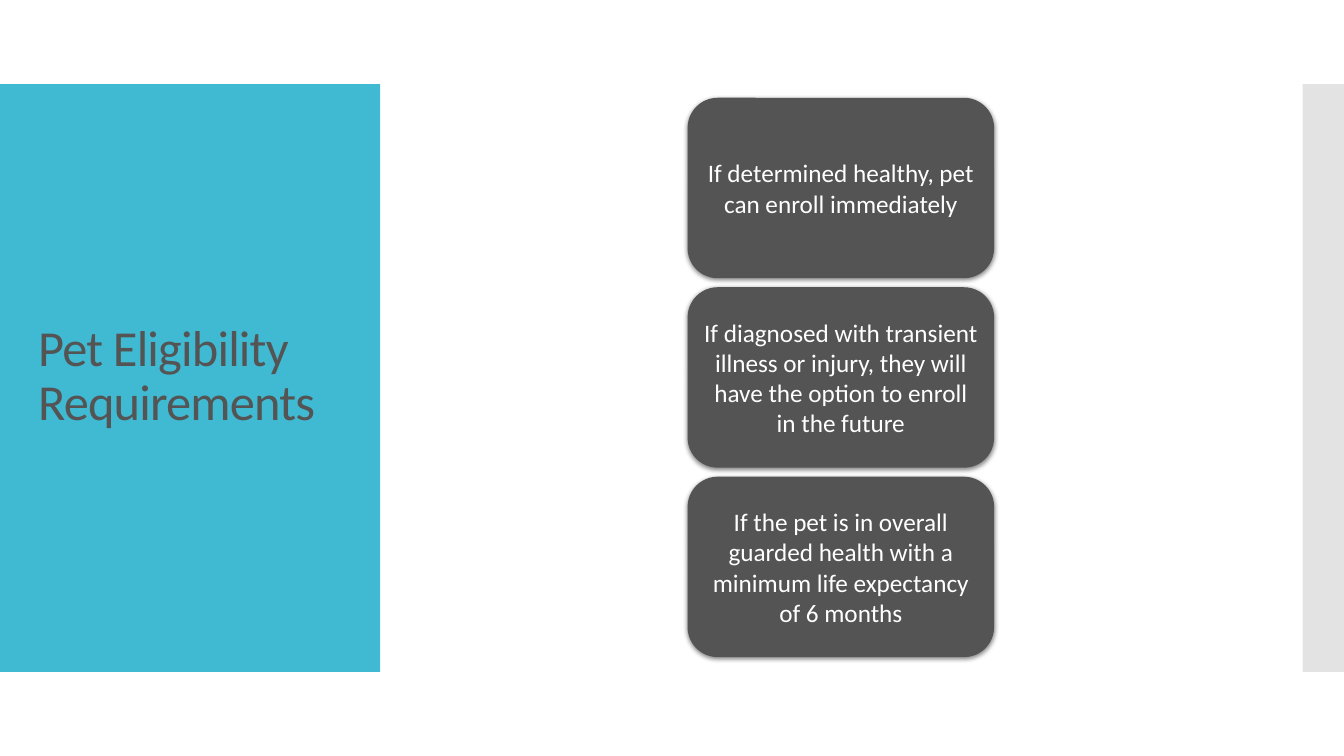
from dataclasses import dataclass

from lxml import etree
from pptx import Presentation
from pptx import util as u
from pptx.dml.color import RGBColor
from pptx.enum import shapes, text
from pptx.oxml import ns

SLIDE_W, SLIDE_H = 13.33, 7.5
BAND_TOP, BAND_H = SLIDE_H / 9, SLIDE_H * 7 / 9
CARD_LEFT, CARD_TOP, CARD_W, CARD_H = 6.82, 0.97, 3.04, 1.79
CARD_PITCH = CARD_H * 1.05

REQUIREMENTS = (
    "If determined healthy, pet can enroll immediately",
    "If diagnosed with transient illness or injury, they will have the option "
    "to enroll in the future",
    "If the pet is in overall guarded health with a minimum life expectancy "
    "of 6 months",
)


@dataclass(frozen=True)
class Theme:
    font: str = "Calibri"
    title_size: int = 36
    card_size: int = 18
    panel: str = "40BAD2"
    edge: str = "C8C8C8"
    dark: str = "545454"
    light: str = "FFFFFF"
    shadow: str = "000000"


THEME = Theme()


def add_color(parent, color, alpha):
    """Append a colour with an opacity in percent."""
    srgb = etree.SubElement(parent, ns.qn("a:srgbClr"), val=color)
    etree.SubElement(srgb, ns.qn("a:alpha"), val=str(alpha * 1000))


def add_block(slide, preset, left, top, width, height, color):
    block = slide.shapes.add_shape(
        preset, u.Inches(left), u.Inches(top), u.Inches(width), u.Inches(height))
    block.shadow.inherit = False
    block.fill.solid()
    block.fill.fore_color.rgb = RGBColor.from_string(color)
    block.line.fill.background()
    return block


def add_band(slide, left, width, color):
    return add_block(slide, shapes.MSO_SHAPE.RECTANGLE,
                     left, BAND_TOP, width, BAND_H, color)


def fade(block, color, alpha):
    fill = block.fill._xPr.find(ns.qn("a:solidFill"))
    fill.clear()
    add_color(fill, color, alpha)


def cast_shadow(block):
    """Give a block a soft shadow straight below it."""
    effects = block._element.spPr.find(ns.qn("a:effectLst"))
    shadow = etree.SubElement(
        effects, ns.qn("a:outerShdw"), blurRad=str(u.Pt(3.5)),
        dist=str(u.Pt(1.1)), dir=str(90 * 60000), algn="ctr", rotWithShape="0")
    add_color(shadow, THEME.shadow, 45)


def write(shape, wording, size, color, align):
    frame = shape.text_frame
    frame.text = wording
    frame.word_wrap = True
    frame.vertical_anchor = text.MSO_ANCHOR.MIDDLE
    paragraph = frame.paragraphs[0]
    paragraph.alignment = align
    font = paragraph.runs[0].font
    font.name, font.size = THEME.font, u.Pt(size)
    font.color.rgb = RGBColor.from_string(color)
    return paragraph


def add_title(slide, wording):
    title = slide.shapes.add_textbox(
        u.Inches(0.28), u.Inches(1.23), u.Inches(3.22), u.Inches(5.03))
    paragraph = write(title, wording, THEME.title_size, THEME.dark,
                      text.PP_ALIGN.LEFT)
    paragraph.line_spacing = 0.9
    paragraph.runs[0].font._element.set("spc", "-60")


def add_card(slide, row, wording):
    card = add_block(slide, shapes.MSO_SHAPE.ROUNDED_RECTANGLE, CARD_LEFT,
                     CARD_TOP + row * CARD_PITCH, CARD_W, CARD_H, THEME.dark)
    cast_shadow(card)
    frame = card.text_frame
    frame.margin_left = frame.margin_right = u.Inches(0.07)
    frame.margin_top = frame.margin_bottom = u.Inches(0.04)
    write(card, wording, THEME.card_size, THEME.light, text.PP_ALIGN.CENTER)


def main():
    deck = Presentation()
    deck.slide_width, deck.slide_height = u.Inches(SLIDE_W), u.Inches(SLIDE_H)
    slide = deck.slides.add_slide(deck.slide_layouts[6])
    add_band(slide, 0, 3.77, THEME.panel)
    edge_band = add_band(slide, 12.92, SLIDE_W - 12.92, THEME.edge)
    fade(edge_band, THEME.edge, 50)
    add_title(slide, "Pet Eligibility Requirements")
    for row, requirement in enumerate(REQUIREMENTS):
        add_card(slide, row, requirement)
    deck.save("out.pptx")


if __name__ == "__main__":
    main()
